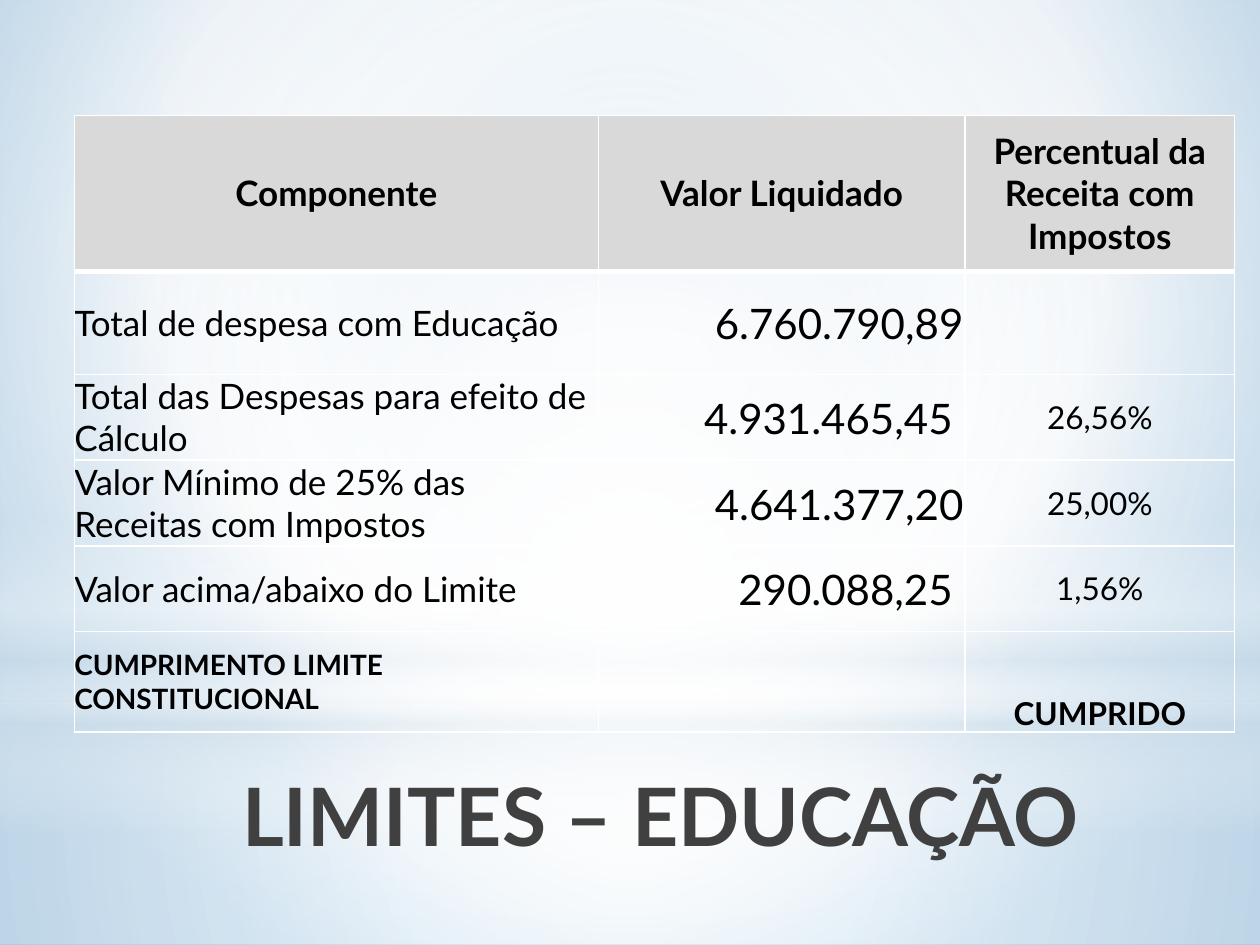
import pptx
import pptx.dml.color
import pptx.enum.shapes
import pptx.enum.text
import pptx.oxml.ns
import pptx.util
from lxml import etree

Pt = pptx.util.Pt
RGB = pptx.dml.color.RGBColor.from_string
qn = pptx.oxml.ns.qn
KIND = pptx.enum.shapes.MSO_SHAPE
ALIGN = pptx.enum.text.PP_ALIGN
ANCHOR = pptx.enum.text.MSO_ANCHOR

THEME = {
    "font": "Lato", "text": "000000", "head": "D9D9D9", "line": "FFFFFF",
    "white": "FFFFFF", "haze": "CCDDEA",
    "title": 46, "value": 24, "label": 20, "share": 18, "small": 16,
}
WHITE, HAZE = THEME["white"], THEME["haze"]
MID = (50, 50, 50, 50)


def paint(fill, root, stops, focus=None):
    """Gradient of (place, colour, opacity) stops: circular around focus, or top down."""
    fill.gradient()
    grad = root.find(".//" + qn("a:gradFill"))
    grad.clear()
    grad.set("rotWithShape", "1")
    group = etree.SubElement(grad, qn("a:gsLst"))
    for place, color, alpha in stops:
        stop = etree.SubElement(group, qn("a:gs"), pos=str(place * 1000))
        tone = etree.SubElement(stop, qn("a:srgbClr"), val=color)
        if alpha < 100:
            etree.SubElement(tone, qn("a:alpha"), val=str(alpha * 1000))
    if focus:
        round_ = etree.SubElement(grad, qn("a:path"))
        round_.set("path", "circle")
        rect = etree.SubElement(round_, qn("a:fillToRect"))
        for side, part in zip("ltrb", focus):
            rect.set(side, str(part * 1000))
    else:
        etree.SubElement(grad, qn("a:lin"), ang="5400000", scaled="0")


def border(cell, widths):
    """Draw the left, right, top and bottom lines of a cell."""
    props = cell._tc.get_or_add_tcPr()
    for spot, (side, width) in enumerate(zip("LRTB", widths)):
        line = etree.Element(qn("a:ln" + side), w=str(Pt(width)))
        solid = etree.SubElement(line, qn("a:solidFill"))
        etree.SubElement(solid, qn("a:srgbClr"), val=THEME["line"])
        props.insert(spot, line)


deck = pptx.Presentation()
deck.slide_width, deck.slide_height = Pt(720), Pt(540)
slide = deck.slides.add_slide(deck.slide_layouts[6])

# Background and layers of light
paint(slide.background.fill, slide._element,
      [(0, "BCD5E8", 100), (60, WHITE, 100), (100, "82B6DE", 100)],
      (20, 10, 20, 60))
LAYERS = [
    (KIND.RECTANGLE, 402, 138, [(0, WHITE, 91), (37, WHITE, 76), (100, HAZE, 79)], MID),
    (KIND.RECTANGLE, 0, 402, [(0, WHITE, 89), (48, WHITE, 62), (100, HAZE, 79)], MID),
    (KIND.RECTANGLE, 296.5, 180,
     [(0, WHITE, 0), (29, WHITE, 30), (45, HAZE, 40), (55, WHITE, 26),
      (65, HAZE, 60), (100, WHITE, 0)], None),
    (KIND.OVAL, 126, 402, [(0, WHITE, 100), (56, WHITE, 0)], MID),
]
for kind, top, height, stops, focus in LAYERS:
    layer = slide.shapes.add_shape(kind, 0, Pt(top), Pt(720), Pt(height))
    layer.shadow.inherit = False
    layer.line.fill.background()
    paint(layer.fill, layer._element, stops, focus)

# Title
box = slide.shapes.add_textbox(Pt(111), Pt(434), Pt(512.5), Pt(90))
box.text_frame.word_wrap = True
para = box.text_frame.paragraphs[0]
para.alignment = ALIGN.RIGHT
run = para.add_run()
run.text = "LIMITES – EDUCAÇÃO"
run.font.name = THEME["font"]
run.font.size = Pt(THEME["title"])
run.font.bold = True
paint(run.font.fill, run._r,
      [(0, "000000", 100), (40, "404040", 100), (100, "465E9C", 65)])

# Table of limits
ROWS = [
    ("Componente", "Valor Liquidado", "Percentual da Receita com Impostos"),
    ("Total de despesa com Educação", "6.760.790,89", ""),
    ("Total das Despesas para efeito de Cálculo", "4.931.465,45 ", "26,56%"),
    ("Valor Mínimo de 25% das Receitas com Impostos", "4.641.377,20", "25,00%"),
    ("Valor acima/abaixo do Limite", "290.088,25 ", "1,56%"),
    ("CUMPRIMENTO LIMITE CONSTITUCIONAL", "", "CUMPRIDO"),
]
WIDTHS = [299.5, 209.5, 154]
HEIGHTS = [89, 59, 49, 49, 49, 57.5]
SIZES = ["label", "value", "share"]
SIDES = [ALIGN.LEFT, ALIGN.RIGHT, ALIGN.CENTER]
LAST = len(ROWS) - 1

frame = slide.shapes.add_table(len(ROWS), len(WIDTHS), Pt(42.5), Pt(66),
                               Pt(sum(WIDTHS)), Pt(sum(HEIGHTS)))
table = frame.table
table.horz_banding = False
for col, width in zip(table.columns, WIDTHS):
    col.width = Pt(width)
for y, (row, height) in enumerate(zip(ROWS, HEIGHTS)):
    table.rows[y].height = Pt(height)
    for x, text in enumerate(row):
        cell = table.cell(y, x)
        head, foot = y == 0, y == LAST
        inset = Pt(1) if x == 1 and not head else 0
        cell.margin_left = cell.margin_right = cell.margin_top = inset
        cell.margin_bottom = 0
        cell.vertical_anchor = ANCHOR.BOTTOM if foot and x == 2 else ANCHOR.MIDDLE
        if head:
            cell.fill.solid()
            cell.fill.fore_color.rgb = RGB(THEME["head"])
        else:
            cell.fill.background()
        border(cell, (1, 1, 3 if y == 1 else 1, 3 if head else 1))
        if not text:
            continue
        para = cell.text_frame.paragraphs[0]
        para.alignment = ALIGN.CENTER if head else SIDES[x]
        run = para.add_run()
        run.text = text
        size = "label" if head else "small" if foot and x == 0 else SIZES[x]
        run.font.name = THEME["font"]
        run.font.size = Pt(THEME[size])
        run.font.bold = head or foot
        run.font.color.rgb = RGB(THEME["text"])

deck.save("out.pptx")
